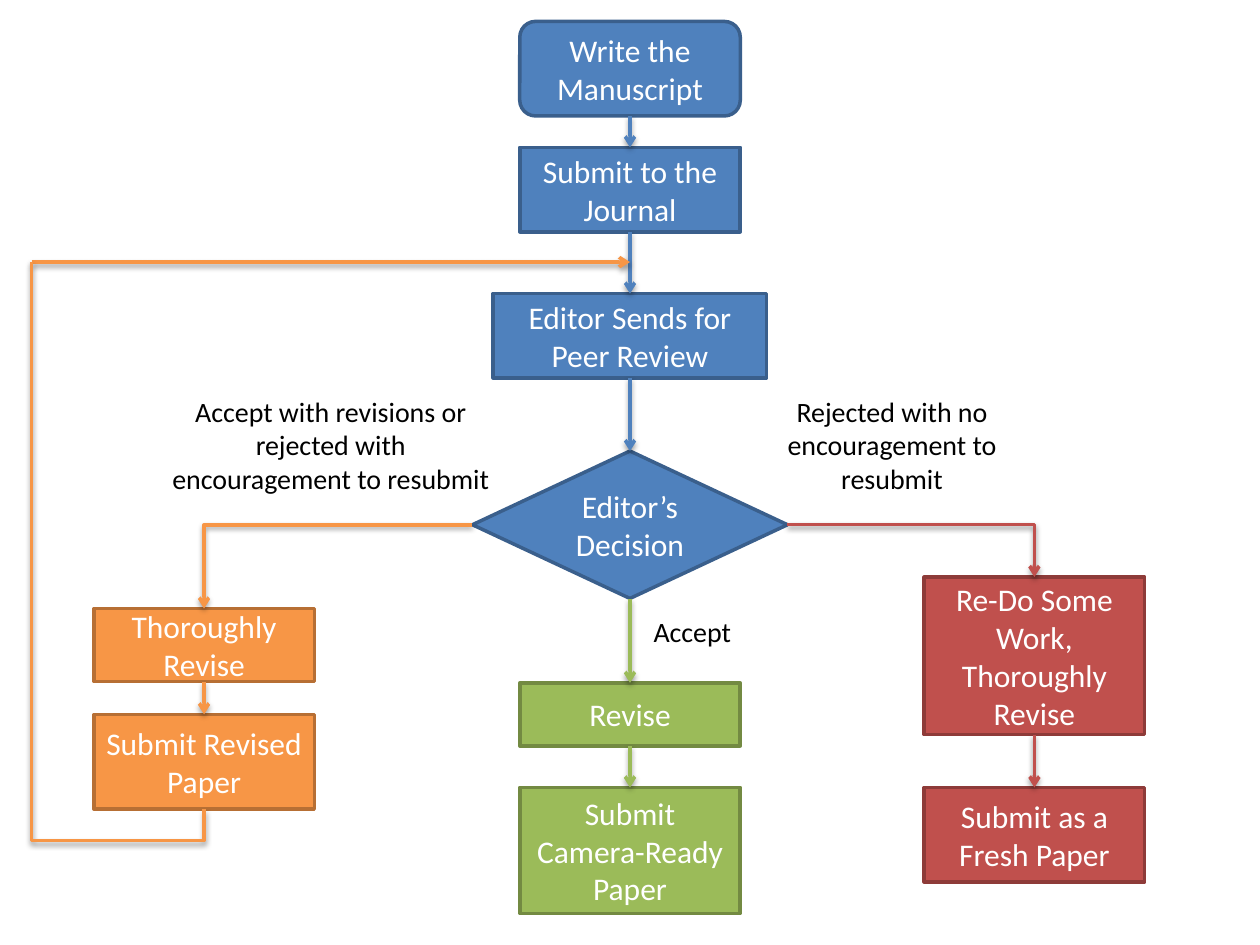
from dataclasses import dataclass

from lxml.etree import SubElement
from pptx import Presentation
from pptx.dml.color import RGBColor
from pptx.enum.shapes import MSO_CONNECTOR, MSO_SHAPE
from pptx.enum.text import MSO_ANCHOR, MSO_AUTO_SIZE, PP_ALIGN
from pptx.oxml.ns import qn
from pptx.util import Inches, Pt

# Connection sites of boxes and diamonds
TOP, LEFT, BOTTOM, RIGHT = range(4)


@dataclass(frozen=True)
class Theme:
    font: str = "Calibri"
    box_size: int = 18
    label_size: int = 16
    line_width: int = 2
    box_text: str = "FFFFFF"
    label_text: str = "000000"
    shadow: str = "000000"
    # Each colour is a fill (also used for arrows) and an outline
    blue: tuple = ("4F81BD", "3A5F8C")
    green: tuple = ("9BBB59", "738A42")
    orange: tuple = ("F79646", "B76F34")
    red: tuple = ("C0504D", "8E3B39")


class Flowchart:
    def __init__(self, slide, theme):
        self.slide = slide
        self.theme = theme

    def set_text(self, shape, text, size, color):
        frame = shape.text_frame
        frame.word_wrap = True
        paragraph = frame.paragraphs[0]
        paragraph.alignment = PP_ALIGN.CENTER
        run = paragraph.add_run()
        run.text = text
        font_format = {"name": self.theme.font, "size": Pt(size)}
        for name, value in font_format.items():
            setattr(run.font, name, value)
        run.font.color.rgb = RGBColor.from_string(color)

    def box(self, text, center, top, height, colors, width=1.75, kind=MSO_SHAPE.RECTANGLE):
        shape = self.slide.shapes.add_shape(
            kind, Inches(center - width / 2), Inches(top), Inches(width), Inches(height))
        fill, outline = colors
        shape.shadow.inherit = False
        shape.fill.solid()
        shape.fill.fore_color.rgb = RGBColor.from_string(fill)
        shape.line.color.rgb = RGBColor.from_string(outline)
        shape.line.width = Pt(self.theme.line_width)
        shape.text_frame.vertical_anchor = MSO_ANCHOR.MIDDLE
        self.set_text(shape, text, self.theme.box_size, self.theme.box_text)
        return shape

    def label(self, text, left, top, width, height):
        shape = self.slide.shapes.add_textbox(
            Inches(left), Inches(top), Inches(width), Inches(height))
        shape.text_frame.auto_size = MSO_AUTO_SIZE.SHAPE_TO_FIT_TEXT
        self.set_text(shape, text, self.theme.label_size, self.theme.label_text)

    def line(self, start, end, colors, kind=MSO_CONNECTOR.STRAIGHT, arrow=True):
        connector = self.slide.shapes.add_connector(
            kind, *(Inches(value) for value in (*start, *end)))
        connector.line.color.rgb = RGBColor.from_string(colors[0])
        connector.line.width = Pt(self.theme.line_width)
        properties = connector._element.spPr
        if arrow:
            SubElement(properties.find(qn("a:ln")), qn("a:tailEnd"), type="arrow")
        # Soft shadow straight below the line
        effects = SubElement(properties, qn("a:effectLst"))
        shadow = SubElement(
            effects, qn("a:outerShdw"), blurRad=str(Pt(3.1)), dist=str(Pt(1.6)),
            dir="5400000", rotWithShape="0")
        color = SubElement(shadow, qn("a:srgbClr"), val=self.theme.shadow)
        SubElement(color, qn("a:alpha"), val="38000")
        return connector

    def connect(self, first, second, colors, site=BOTTOM):
        """Arrow from a site of the first box to the top of the second."""
        bent = site != BOTTOM
        kind = MSO_CONNECTOR.ELBOW if bent else MSO_CONNECTOR.STRAIGHT
        connector = self.line((0, 0), (0, 0), colors, kind)
        connector.begin_connect(first, site)
        connector.end_connect(second, TOP)
        if bent:
            geometry = connector._element.spPr.find(qn("a:prstGeom"))
            geometry.set("prst", "bentConnector2")

    def loop_back(self, start, end, overshoot, colors):
        """Line that leaves downwards, then runs left and up to its end."""
        (start_x, start_y), (end_x, end_y) = start, end
        center_x, center_y = (start_x + end_x) / 2, (start_y + end_y) / 2
        half_run, half_drop = (start_y - end_y) / 2, (start_x - end_x) / 2
        # Drawn lying down, then turned by 90 degrees
        connector = self.line(
            (center_x + half_run, center_y - half_drop),
            (center_x - half_run, center_y + half_drop),
            colors, MSO_CONNECTOR.ELBOW, arrow=False)
        properties = connector._element.spPr
        properties.find(qn("a:xfrm")).set("rot", "5400000")
        guides = properties.find(qn("a:prstGeom")).find(qn("a:avLst"))
        ratio = round(-overshoot / (start_y - end_y) * 100000)
        SubElement(guides, qn("a:gd"), name="adj1", fmla=f"val {ratio}")


def main():
    presentation = Presentation()
    presentation.slide_width = Inches(10)
    presentation.slide_height = Inches(7.5)
    slide = presentation.slides.add_slide(presentation.slide_layouts[6])
    theme = Theme()
    chart = Flowchart(slide, theme)
    left, middle, right = 1.62, 5, 8.21

    # Submission and review
    manuscript = chart.box("Write the Manuscript", middle, 0.17, 0.75, theme.blue,
                           kind=MSO_SHAPE.ROUNDED_RECTANGLE)
    submission = chart.box("Submit to the Journal", middle, 1.17, 0.67, theme.blue)
    review = chart.box("Editor Sends for Peer Review", middle, 2.33, 0.67, theme.blue, width=2.17)
    decision = chart.box("Editor’s Decision", middle, 3.58, 1.17, theme.blue, width=2.5,
                         kind=MSO_SHAPE.FLOWCHART_DECISION)

    # Accepted
    revision = chart.box("Revise", middle, 5.42, 0.5, theme.green)
    final_paper = chart.box("Submit Camera-Ready Paper", middle, 6.25, 1, theme.green)

    # Revise and resubmit
    rework = chart.box("Thoroughly Revise", left, 4.83, 0.58, theme.orange)
    resubmission = chart.box("Submit Revised Paper", left, 5.67, 0.75, theme.orange)

    # Rejected
    redo = chart.box("Re-Do Some Work, Thoroughly Revise", right, 4.58, 1.25, theme.red)
    fresh_paper = chart.box("Submit as a Fresh Paper", right, 6.25, 0.75, theme.red)

    # Outcomes of the decision
    chart.label("Accept", 4.83, 4.83, 1.33, 0.37)
    chart.label("Accept with revisions or rejected with encouragement to resubmit",
                1.25, 3.08, 2.75, 0.91)
    chart.label("Rejected with no encouragement to resubmit", 6, 3.08, 2.16, 0.91)

    # Arrows between boxes
    chart.connect(decision, rework, theme.orange, LEFT)
    chart.connect(decision, redo, theme.red, RIGHT)
    branches = [
        (theme.blue, (manuscript, submission, review, decision)),
        (theme.green, (decision, revision, final_paper)),
        (theme.orange, (rework, resubmission)),
        (theme.red, (redo, fresh_paper)),
    ]
    for colors, boxes in branches:
        for first, second in zip(boxes, boxes[1:]):
            chart.connect(first, second, colors)

    # Return of the revised paper to peer review
    corner = (0.25, 2.08)
    chart.line(corner, (middle, 2.08), theme.orange)
    chart.loop_back((left, 6.42), corner, 0.25, theme.orange)

    presentation.save("out.pptx")


if __name__ == "__main__":
    main()
